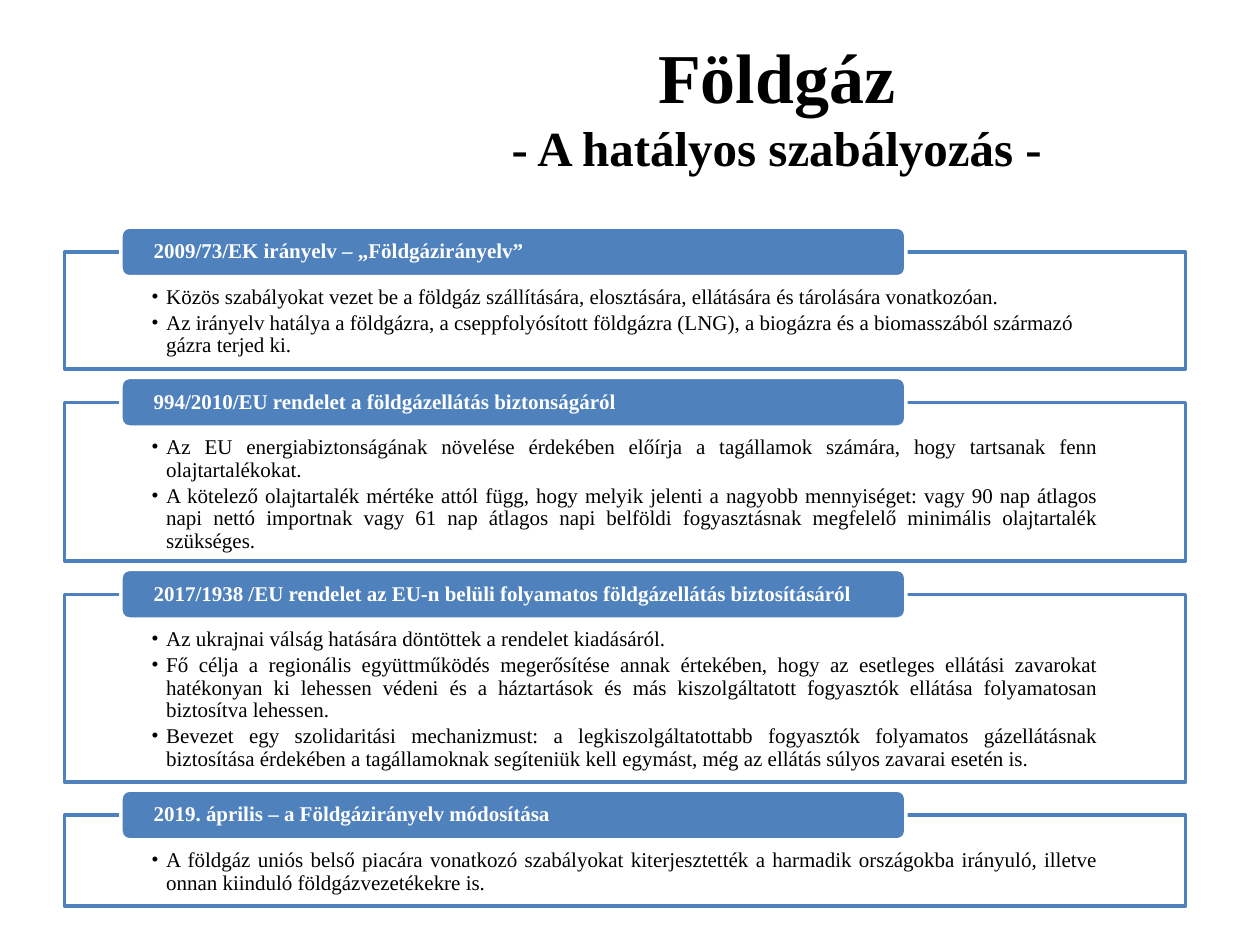
from dataclasses import dataclass

from lxml.etree import SubElement
from pptx import Presentation
from pptx.dml.color import RGBColor
from pptx.enum.shapes import MSO_SHAPE
from pptx.enum.text import MSO_ANCHOR, MSO_AUTO_SIZE, PP_ALIGN
from pptx.oxml.ns import qn
from pptx.util import Cm, Pt


@dataclass(frozen=True)
class Theme:
    font: str = "Times New Roman"
    blue: RGBColor = RGBColor(0x4F, 0x81, 0xBD)
    white: RGBColor = RGBColor(0xFF, 0xFF, 0xFF)
    black: RGBColor = RGBColor(0, 0, 0)
    title_size: int = 40
    subtitle_size: int = 28
    text_size: int = 12
    border: int = 2


theme = Theme()


def write(frame, text, *, first=True, size=theme.text_size, color=theme.black,
          bold=False, align=PP_ALIGN.LEFT, spacing=0.9, after=0, bullet=False):
    para = frame.paragraphs[0] if first else frame.add_paragraph()
    if bullet:
        para.level = 1
        properties = para._p.get_or_add_pPr()
        properties.set("marL", str(Cm(0.3)))
        properties.set("indent", str(-Cm(0.3)))
        SubElement(properties, qn("a:buFont")).set("typeface", theme.font)
        SubElement(properties, qn("a:buChar")).set("char", "•")
    para.alignment = align
    para.line_spacing = spacing
    para.space_before = Pt(0)
    para.space_after = Pt(after)
    span = para.add_run()
    span.text = text
    span.font.name = theme.font
    span.font.size = Pt(size)
    span.font.bold = bold
    span.font.color.rgb = color


def prepare(box, fill, line, anchor, margins):
    box.fill.solid()
    box.fill.fore_color.rgb = fill
    box.line.color.rgb = line
    box.line.width = Pt(theme.border)
    frame = box.text_frame
    frame.word_wrap = True
    frame.auto_size = MSO_AUTO_SIZE.NONE
    frame.vertical_anchor = anchor
    side, top, bottom = margins
    frame.margin_left = frame.margin_right = Cm(side)
    frame.margin_top, frame.margin_bottom = Cm(top), Cm(bottom)
    return frame


sections = [
    ("2009/73/EK irányelv – „Földgázirányelv”", 2.36, PP_ALIGN.LEFT, [
        "Közös szabályokat vezet be a földgáz szállítására, elosztására, ellátására és tárolására vonatkozóan.",
        "Az irányelv hatálya a földgázra, a cseppfolyósított földgázra (LNG), a biogázra és a biomasszából származó gázra terjed ki.",
    ]),
    ("994/2010/EU rendelet a földgázellátás biztonságáról", 3.2, PP_ALIGN.JUSTIFY, [
        "Az EU energiabiztonságának növelése érdekében előírja a tagállamok számára, hogy tartsanak fenn olajtartalékokat.",
        "A kötelező olajtartalék mértéke attól függ, hogy melyik jelenti a nagyobb mennyiséget: vagy 90 nap átlagos napi nettó importnak vagy 61 nap átlagos napi belföldi fogyasztásnak megfelelő minimális olajtartalék szükséges.",
    ]),
    ("2017/1938 /EU rendelet az EU-n belüli folyamatos földgázellátás biztosításáról", 3.78, PP_ALIGN.JUSTIFY, [
        "Az ukrajnai válság hatására döntöttek a rendelet kiadásáról.",
        "Fő célja a regionális együttműködés megerősítése annak értekében, hogy az esetleges ellátási zavarokat hatékonyan ki lehessen védeni és a háztartások és más kiszolgáltatott fogyasztók ellátása folyamatosan biztosítva lehessen.",
        "Bevezet egy szolidaritási mechanizmust: a legkiszolgáltatottabb fogyasztók folyamatos gázellátásnak biztosítása érdekében a tagállamoknak segíteniük kell egymást, még az ellátás súlyos zavarai esetén is.",
    ]),
    ("2019. április – a Földgázirányelv módosítása", 1.83, PP_ALIGN.JUSTIFY, [
        "A földgáz uniós belső piacára vonatkozó szabályokat kiterjesztették a harmadik országokba irányuló, illetve onnan kiinduló földgázvezetékekre is.",
    ]),
]

deck = Presentation()
deck.slide_width, deck.slide_height = Cm(25.4), Cm(19.05)
page = deck.slides.add_slide(deck.slide_layouts.get_by_name("Comparison"))

title = page.shapes.title
title.left, title.top, title.width, title.height = Cm(6.55), Cm(0.53), Cm(18.21), Cm(3.18)
title.text_frame.auto_size = MSO_AUTO_SIZE.NONE
title.text_frame.vertical_anchor = MSO_ANCHOR.MIDDLE
write(title.text_frame, "Földgáz", size=theme.title_size, bold=True,
      align=PP_ALIGN.CENTER, spacing=1.0)
write(title.text_frame, "- A hatályos szabályozás -", first=False,
      size=theme.subtitle_size, bold=True, align=PP_ALIGN.CENTER, spacing=1.0)

top, gap, header_height = 5.08, 0.67, 1.0
for number, (heading, height, align, points) in enumerate(sections, start=1):
    panel = page.placeholders[number]
    panel.left, panel.top, panel.width, panel.height = Cm(1.3), Cm(top), Cm(22.6), Cm(height)
    frame = prepare(panel, theme.white, theme.blue, MSO_ANCHOR.TOP, (1.75, 0.69, 0.23))
    for index, point in enumerate(points):
        write(frame, point, first=index == 0, align=align, after=1.8, bullet=True)

    header = page.shapes.add_shape(MSO_SHAPE.ROUNDED_RECTANGLE, Cm(2.44),
                                   Cm(top - header_height / 2), Cm(15.82), Cm(header_height))
    header.shadow.inherit = False
    frame = prepare(header, theme.blue, theme.white, MSO_ANCHOR.MIDDLE, (0.61, 0, 0))
    write(frame, heading, color=theme.white, bold=True)
    top += height + gap

deck.save("out.pptx")
